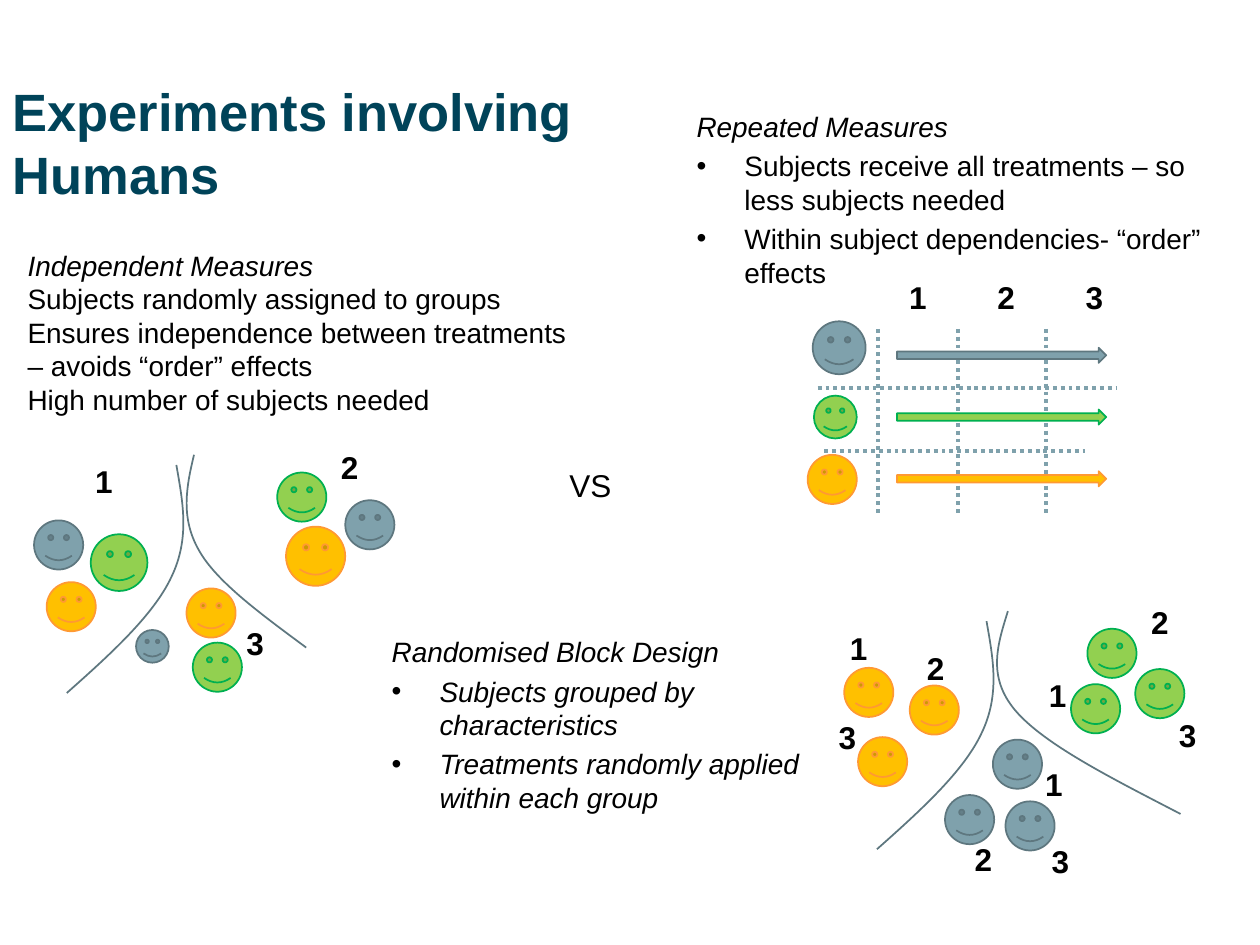
from dataclasses import dataclass

from lxml.etree import SubElement
from pptx import Presentation
from pptx.dml.color import RGBColor
from pptx.enum.dml import MSO_LINE
from pptx.enum.shapes import MSO_CONNECTOR, MSO_SHAPE
from pptx.enum.text import MSO_ANCHOR, PP_ALIGN
from pptx.oxml.ns import qn
from pptx.util import Emu, Pt

PX = 9144  # one px is a hundredth of an inch


@dataclass(frozen=True)
class Theme:
    font: str = "Arial"
    title_size: int = 30
    label_size: int = 18
    body_size: int = 16
    title: str = "004359"
    text: str = "000000"
    grey: tuple = ("7FA1AC", "5E777F")  # fill, outline
    green: tuple = ("92D050", "00B050")
    orange: tuple = ("FFC000", "FF9933")


THEME = Theme()


def px(*lengths):
    return [Emu(length * PX) for length in lengths]


def color(value):
    return RGBColor.from_string(value)


def format_paragraph(paragraph, size, fill=THEME.text, bold=False, italic=False):
    for run in paragraph.runs:
        font = run.font
        font.name, font.size = THEME.font, Pt(size)
        font.bold, font.italic = bold, italic
        font.color.rgb = color(fill)


def add_bullet(paragraph):
    properties = paragraph._p.get_or_add_pPr()
    indent = 38 * PX
    properties.set("marL", str(indent))
    properties.set("indent", str(-indent))
    SubElement(properties, qn("a:buFont")).set("typeface", THEME.font)
    SubElement(properties, qn("a:buChar")).set("char", "•")


def add_label(slide, text, left, top, width=77, bold=True):
    box = slide.shapes.add_textbox(*px(left, top, width, 40))
    box.text_frame.word_wrap = True
    box.text_frame.text = text
    paragraph = box.text_frame.paragraphs[0]
    paragraph.alignment = PP_ALIGN.CENTER
    format_paragraph(paragraph, THEME.label_size, bold=bold)


def add_description(slide, box, heading, points, bulleted=True, italic=False):
    frame = slide.shapes.add_textbox(*px(*box)).text_frame
    frame.word_wrap = True
    frame.text = "\n".join([heading, *points])
    for index, paragraph in enumerate(frame.paragraphs):
        if index and bulleted:
            paragraph.space_before = Pt(3.2)
            add_bullet(paragraph)
        format_paragraph(paragraph, THEME.body_size, italic=italic or index == 0)


def add_preset(slide, preset, colors, left, top, width, height):
    shape = slide.shapes.add_shape(preset, *px(left, top, width, height))
    shape.shadow.inherit = False
    shape.fill.solid()
    shape.fill.fore_color.rgb = color(colors[0])
    shape.line.color.rgb = color(colors[1])
    shape.line.width = Pt(1)


def add_face(slide, colors, left, top, size=39):
    add_preset(slide, MSO_SHAPE.SMILEY_FACE, colors, left, top, size, size)


def add_dotted_line(slide, *ends):
    line = slide.shapes.add_connector(MSO_CONNECTOR.STRAIGHT, *px(*ends))
    line.line.color.rgb = color(THEME.grey[0])
    line.line.width = Pt(2.25)
    line.line.dash_style = MSO_LINE.ROUND_DOT
    SubElement(line._element.spPr, qn("a:effectLst"))


def add_divider(slide, left, top, width, height, points):
    """Two joined cubic curves; points are relative to the given box."""
    builder = slide.shapes.build_freeform(left, top, scale=PX)
    builder.add_line_segments([(left + width, top + height)], close=False)
    shape = builder.convert_to_shape()
    # Exchange the diagonal of the box for the curves
    outline = shape._element.spPr.find(".//" + qn("a:path"))
    for segment in list(outline):
        outline.remove(segment)
    for tag, places in (("a:moveTo", points[:1]), ("a:cubicBezTo", points[1:4]),
                        ("a:cubicBezTo", points[4:])):
        segment = SubElement(outline, qn(tag))
        for x, y in places:
            point = SubElement(segment, qn("a:pt"))
            point.set("x", str(x))
            point.set("y", str(y))
    shape.shadow.inherit = False
    shape.fill.background()
    shape.line.color.rgb = color(THEME.grey[1])
    shape.line.width = Pt(1)


def add_groups(slide, left, top, faces, dividers, labels):
    """Faces split into groups by curves, with numbered treatments."""
    for colors, places in faces:
        for x, y, *size in places:
            add_face(slide, colors, left + x, top + y, *size)
    for x, y, width, height, points in dividers:
        add_divider(slide, left + x, top + y, width, height, points)
    for text, x, y in labels:
        add_label(slide, text, left + x, top + y)


def add_title(slide, left, top, width, height):
    title = slide.shapes.title
    title.left, title.top, title.width, title.height = px(left, top, width, height)
    frame = title.text_frame
    frame.text = "Experiments involving\vHumans"
    frame.vertical_anchor = MSO_ANCHOR.TOP
    paragraph = frame.paragraphs[0]
    paragraph.alignment = PP_ALIGN.LEFT
    format_paragraph(paragraph, THEME.title_size, THEME.title, bold=True)


def add_repeated_measures(slide, left, top):
    add_description(slide, (left, top, 445, 236), "Repeated Measures", [
        "Subjects receive all treatments – so less subjects needed",
        "Within subject dependencies- “order” effects"])
    # Dotted grid
    for y, start, end in ((226, 106, 343), (276, 111, 318)):
        add_dotted_line(slide, left + start, top + y, left + end, top + y)
    for x in (154, 217, 287):
        add_dotted_line(slide, left + x, top + 179, left + x, top + 325)
    # Treatments across, one subject per row
    for index in range(3):
        add_label(slide, str(index + 1), left + 147 + 70 * index, top + 134)
    rows = ((THEME.grey, 102, 173, 42), (THEME.green, 103, 232, 34),
            (THEME.orange, 98, 279, 39))
    for index, (colors, x, y, size) in enumerate(rows):
        add_face(slide, colors, left + x, top + y, size)
        add_preset(slide, MSO_SHAPE.RIGHT_ARROW, colors,
                   left + 169, top + 194 + 49 * index, 166, 12)


# Left curve, shared by both grouped designs
LEFT_CURVE = ((0, 181), (35, 150), (69, 119), (83, 89), (98, 58), (92, 29), (87, 0))


def add_block_design(slide, left, top):
    add_description(slide, (left, top + 25, 392, 236), "Randomised Block Design", [
        "Subjects grouped by characteristics",
        "Treatments randomly applied within each group"], italic=True)
    faces = ((THEME.grey, ((497, 162), (449, 157), (487, 113))),
             (THEME.green, ((600, 57), (549, 69), (562, 25))),
             (THEME.orange, ((380, 111), (369, 56), (421, 70))))
    right_curve = ((146, 161), (92, 133), (38, 106), (15, 79), (-8, 52), (1, 26), (9, 0))
    dividers = ((395, 19, 92, 181, LEFT_CURVE), (490, 11, 146, 161, right_curve))
    labels = (("1", 342, 20), ("2", 403, 36), ("3", 333, 91),
              ("1", 500, 58), ("2", 581, 0), ("3", 603, 89),
              ("1", 497, 128), ("2", 441, 188), ("3", 502, 189))
    add_groups(slide, left, top, faces, dividers, labels)


def add_independent_measures(slide, left, top):
    faces = ((THEME.grey, ((15, 221), (96, 308, 26), (262, 205))),
             (THEME.green, ((60, 232, 45), (141, 318), (208, 183))),
             (THEME.orange, ((25, 270), (136, 275), (215, 226, 47))))
    right_curve = ((95, 153), (60, 127), (24, 101), (10, 76), (-5, 50), (0, 25), (6, 0))
    dividers = ((41, 177, 92, 181, LEFT_CURVE), (136, 169, 95, 153, right_curve))
    labels = (("1", 32, 170), ("2", 227, 159), ("3", 152, 298))
    add_groups(slide, left, top, faces, dividers, labels)
    add_description(slide, (left, top, 465, 175), "Independent Measures", [
        "Subjects randomly assigned to groups",
        "Ensures independence between treatments – avoids “order” effects",
        "High number of subjects needed"], bulleted=False)


def main():
    presentation = Presentation()
    presentation.slide_width, presentation.slide_height = px(1000, 750)
    slide = presentation.slides.add_slide(presentation.slide_layouts[5])
    add_title(slide, 0, 58, 928, 142)
    add_label(slide, "VS", 425, 365, width=87, bold=False)
    add_repeated_measures(slide, 543, 82)
    add_block_design(slide, 301, 474)
    add_independent_measures(slide, 12, 192)
    presentation.save("out.pptx")


if __name__ == "__main__":
    main()
